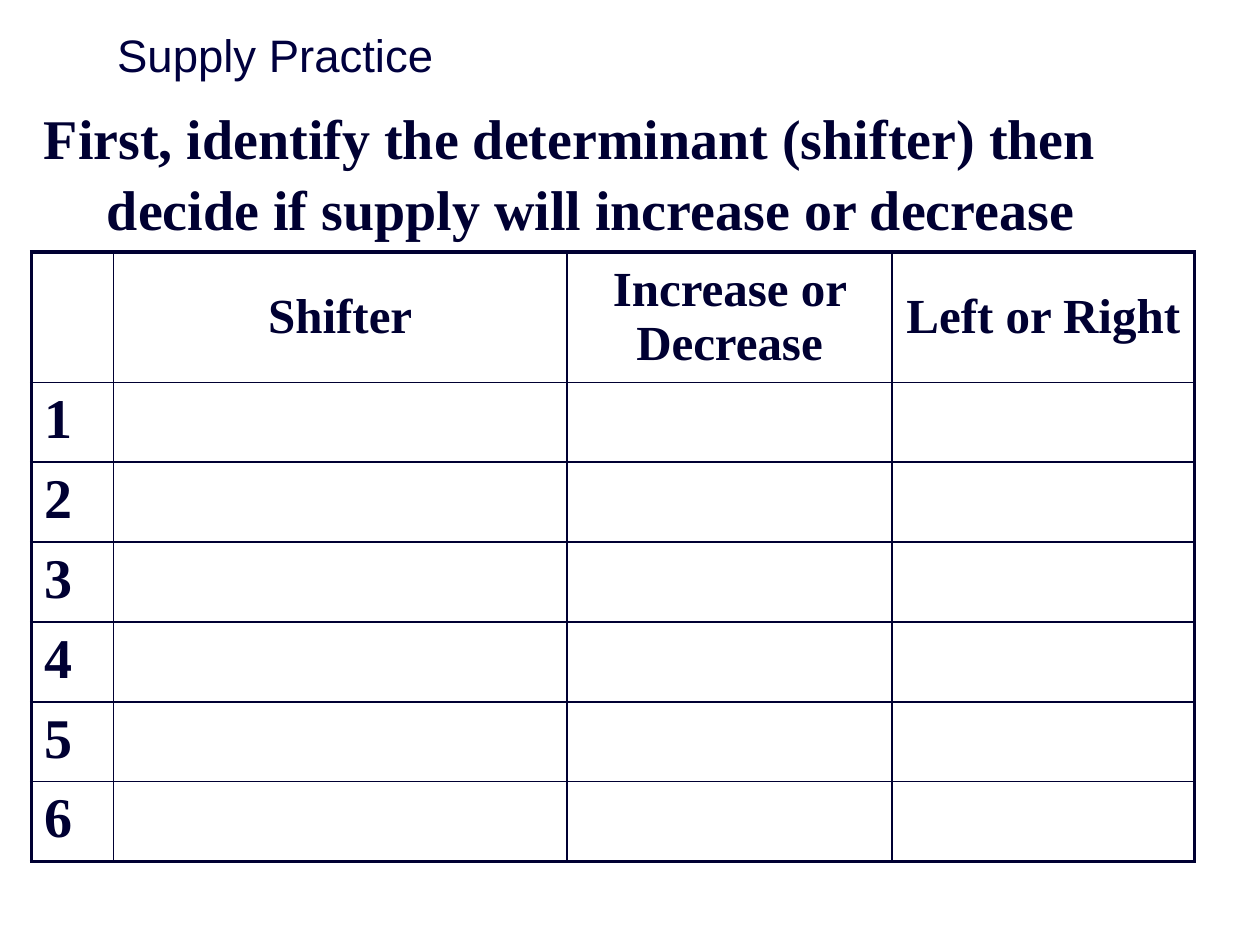
from dataclasses import dataclass

from lxml.etree import SubElement
from pptx import Presentation
from pptx.dml.color import RGBColor as Color
from pptx.enum.text import MSO_ANCHOR as Anchor, MSO_AUTO_SIZE as AutoSize, PP_ALIGN as Align
from pptx.oxml.ns import qn
from pptx.util import Inches, Pt


@dataclass(frozen=True)
class Theme:
    ink: str = "000032"
    title_ink: str = "00003E"
    title_face: str = "Arial"
    face: str = "Times New Roman"
    title_size: int = 26
    body_size: int = 32
    header_size: int = 28
    frame: float = 2.25
    rule: float = 1


THEME = Theme()
COLUMNS = (0.65, 3.6, 2.58, 2.4)
HEADERS = ("", "Shifter", "Increase or Decrease", "Left or Right")
QUESTIONS = 6
HEADER_HEIGHT, ROW_HEIGHT = 1.03, 0.63


def apply(target, formats):
    for name, value in formats.items():
        setattr(target, name, value)


def write(frame, text, size, face=THEME.face, ink=THEME.ink, bold=True, align=Align.LEFT):
    para = frame.paragraphs[0]
    para.alignment = align
    span = para.add_run()
    span.text = text
    apply(span.font, {"name": face, "size": Pt(size), "bold": bold})
    span.font.color.rgb = Color.from_string(ink)
    return para


def add_title(page, text):
    title = page.shapes.title
    apply(title, {"left": Inches(0.83), "top": Inches(-0.19),
                  "width": Inches(8.5), "height": Inches(1.25)})
    title.text_frame.vertical_anchor = Anchor.MIDDLE
    write(title.text_frame, text, THEME.title_size, THEME.title_face, THEME.title_ink, False)


def add_instruction(page, text):
    box = page.shapes.add_textbox(Inches(0.25), Inches(0.75), Inches(9.75), Inches(1.17))
    apply(box.text_frame, {"word_wrap": True, "auto_size": AutoSize.SHAPE_TO_FIT_TEXT})
    para = write(box.text_frame, text, THEME.body_size)
    para.line_spacing = 1.05
    properties = para._p.get_or_add_pPr()
    properties.set("marL", str(Inches(0.5)))
    properties.set("indent", str(Inches(-0.5)))


def draw_borders(cell, outer_sides):
    properties = cell._tc.get_or_add_tcPr()
    for position, side in enumerate("LRTB"):
        width = THEME.frame if side in outer_sides else THEME.rule
        line = SubElement(properties, qn(f"a:ln{side}"), w=str(Pt(width)))
        fill = SubElement(line, qn("a:solidFill"))
        SubElement(fill, qn("a:srgbClr"), val=THEME.ink)
        properties.insert(position, line)


def add_worksheet(page):
    rows = [HEADERS] + [(str(number), "", "", "") for number in range(1, QUESTIONS + 1)]
    heights = [HEADER_HEIGHT] + [ROW_HEIGHT] * QUESTIONS
    table = page.shapes.add_table(len(rows), len(COLUMNS), Inches(0.25), Inches(2),
                                  Inches(sum(COLUMNS)), Inches(sum(heights))).table
    apply(table, {"first_row": False, "horz_banding": False})
    for column, width in zip(table.columns, COLUMNS):
        column.width = Inches(width)
    for row, (texts, height) in enumerate(zip(rows, heights)):
        table.rows[row].height = Inches(height)
        for column, text in enumerate(texts):
            cell = table.cell(row, column)
            cell.fill.background()
            edges = {"L": column == 0, "R": column == len(COLUMNS) - 1,
                     "T": row == 0, "B": row == QUESTIONS}
            draw_borders(cell, [side for side, outer in edges.items() if outer])
            if text and row == 0:
                cell.vertical_anchor = Anchor.MIDDLE
                write(cell.text_frame, text, THEME.header_size, align=Align.CENTER)
            elif text:
                write(cell.text_frame, text, THEME.body_size)


def main():
    deck = Presentation()
    apply(deck, {"slide_width": Inches(10), "slide_height": Inches(7.5)})
    page = deck.slides.add_slide(deck.slide_layouts[5])
    add_title(page, "Supply Practice")
    add_instruction(page, "First, identify the determinant (shifter) then "
                          "decide if supply will increase or decrease")
    add_worksheet(page)
    deck.save("out.pptx")


if __name__ == "__main__":
    main()
